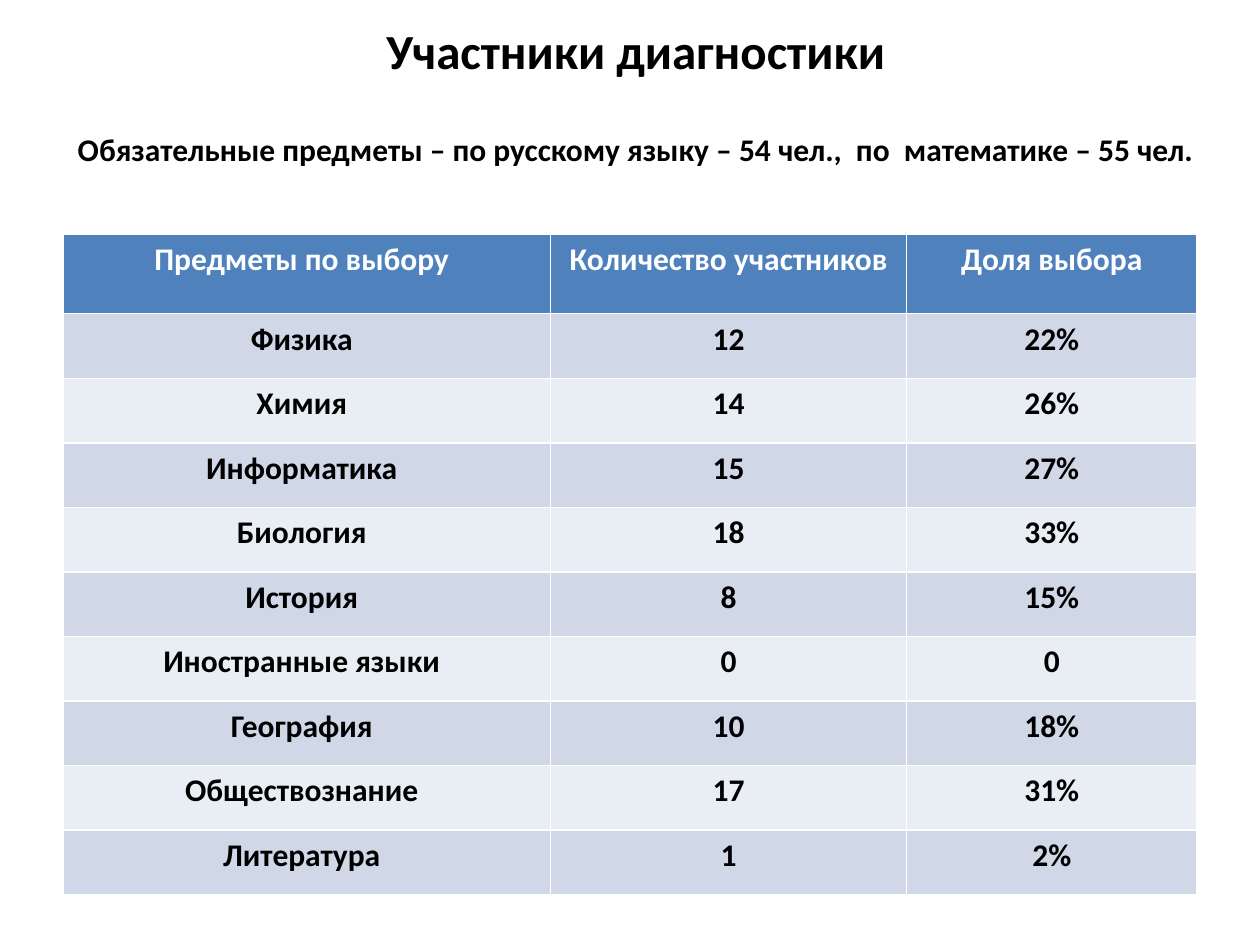
from typing import NamedTuple

from pptx import Presentation, util as u
from pptx.dml.color import RGBColor
from pptx.enum import text

SLIDE_W, SLIDE_H = 10, 7.5
COLUMN_SHARES = (0.43, 0.314, 0.256)
HEADER_H, TABLE_H = 0.63, 5.24
HEADER_FILL, BAND_FILLS = "4F81BD", ("D0D8E8", "E9EDF4")


class Box(NamedTuple):
    left: float
    top: float
    width: float
    height: float


class Subject(NamedTuple):
    name: str
    count: str
    share: str


TITLE_BOX = Box(0.51, 0.36, 9.07, 1.65)
TABLE_BOX = Box(0.5, 1.86, 9, TABLE_H)
HEADER = Subject("Предметы по выбору", "Количество участников", "Доля выбора")
SUBJECTS = [
    Subject("Физика", "12", "22%"),
    Subject("Химия", "14", "26%"),
    Subject("Информатика", "15", "27%"),
    Subject("Биология", "18", "33%"),
    Subject("История", "8", "15%"),
    Subject("Иностранные языки", "0", "0"),
    Subject("География", "10", "18%"),
    Subject("Обществознание", "17", "31%"),
    Subject("Литература", "1", "2%"),
]


def color(value: str) -> RGBColor:
    return RGBColor.from_string(value)


def apply(target, formats: dict) -> None:
    for name, value in formats.items():
        setattr(target, name, value)


def write(p, words: str, size: float, ink: str = "000000") -> None:
    p.alignment = text.PP_ALIGN.CENTER
    r = p.add_run()
    r.text = words
    apply(r.font, {"name": "Calibri", "size": u.Pt(size), "bold": True})
    r.font.color.rgb = color(ink)


def draw_title(s) -> None:
    sp = s.shapes.title
    apply(sp, {k: u.Inches(v) for k, v in TITLE_BOX._asdict().items()})
    tf = sp.text_frame
    apply(tf, {
        "word_wrap": True,
        "auto_size": text.MSO_AUTO_SIZE.NONE,
        "vertical_anchor": text.MSO_ANCHOR.MIDDLE,
        "margin_left": u.Inches(0.05),
        "margin_right": u.Inches(0.05),
        "margin_top": u.Inches(0.05),
        "margin_bottom": u.Inches(0.93),
    })
    p = tf.paragraphs[0]
    write(p, "Участники диагностики", 28)
    apply(p, {"space_before": u.Pt(0), "space_after": u.Pt(29)})
    p = tf.add_paragraph()
    write(p, "Обязательные предметы – по русскому языку – 54 чел.,  по  математике – 55 чел.", 18)
    p.space_before = u.Pt(0)


def draw_table(s) -> None:
    rows = [HEADER, *SUBJECTS]
    table = s.shapes.add_table(
        len(rows), len(COLUMN_SHARES), *map(u.Inches, TABLE_BOX)).table
    for column, share in zip(table.columns, COLUMN_SHARES):
        column.width = u.Inches(TABLE_BOX.width * share)
    for i, subject in enumerate(rows):
        table.rows[i].height = u.Inches(
            (TABLE_H - HEADER_H) / len(SUBJECTS) if i else HEADER_H)
        for j, words in enumerate(subject):
            cell = table.cell(i, j)
            cell.fill.solid()
            cell.fill.fore_color.rgb = color(
                BAND_FILLS[(i - 1) % 2] if i else HEADER_FILL)
            cell.margin_right = u.Inches(0.1 if j else 0.18)
            write(cell.text_frame.paragraphs[0], words, 18,
                  "000000" if i else "FFFFFF")


def main() -> None:
    """Build the slide on diagnostics participants."""
    prs = Presentation()
    apply(prs, {"slide_width": u.Inches(SLIDE_W), "slide_height": u.Inches(SLIDE_H)})
    s = prs.slides.add_slide(prs.slide_layouts[5])
    draw_title(s)
    draw_table(s)
    prs.save("out.pptx")


if __name__ == "__main__":
    main()
